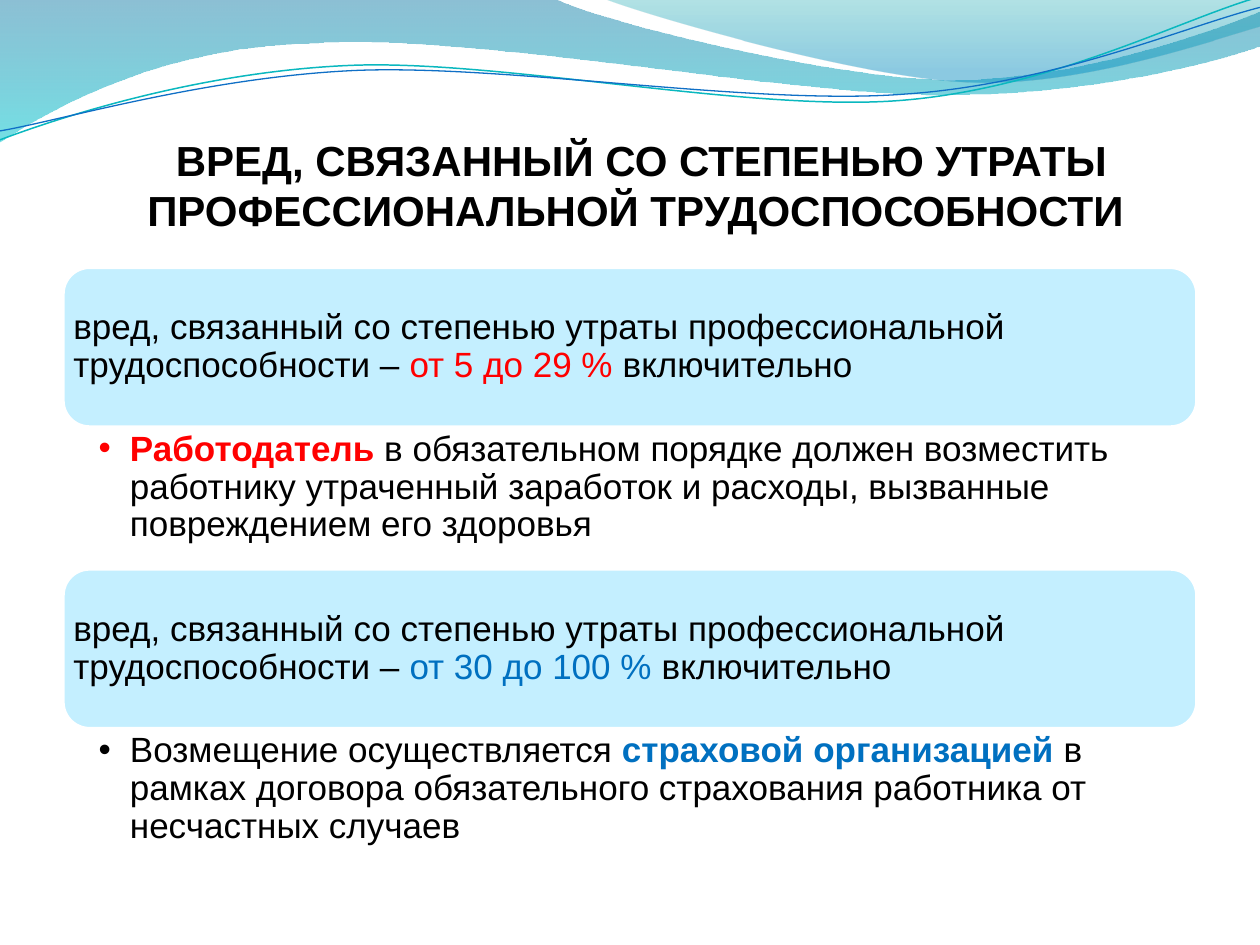
from pptx import Presentation
from pptx import util as u
from pptx.dml.color import RGBColor
from pptx.enum import shapes, text
from pptx.oxml.ns import qn
from lxml import etree

THEME = {
    "font": "Arial", "title_size": 24, "body_size": 20,
    "black": "000000", "red": "FF0000", "blue": "0070C0",
    "panel": "C4EFFF", "panel_line": "FFFFFF",
}

# Content: runs are (text, colour, bold)
TITLE = "ВРЕД, СВЯЗАННЫЙ СО СТЕПЕНЬЮ УТРАТЫ ПРОФЕССИОНАЛЬНОЙ ТРУДОСПОСОБНОСТИ "
HARM = "вред, связанный со степенью утраты профессиональной трудоспособности – "
SECTIONS = [
    {
        "heading": [(HARM, "black", False), ("от 5 до 29 % ", "red", False),
                    ("включительно", "black", False)],
        "detail": [("Работодатель", "red", True),
                   (" в обязательном порядке должен возместить работнику утраченный "
                    "заработок и расходы, вызванные повреждением его здоровья", "black", False)],
    },
    {
        "heading": [(HARM, "black", False), ("от 30 до 100 % ", "blue", False),
                    ("включительно", "black", False)],
        "detail": [("Возмещение осуществляется ", "black", False),
                   ("страховой организацией ", "blue", True),
                   ("в рамках договора обязательного страхования работника "
                    "от несчастных случаев", "black", False)],
    },
]

# Waves in cm: the first point, then segments of one point (line) or three (curve)
WAVES = [
    {"start": (0, 0), "stops": [(0, "0074A1", 45), (1, "00C6CF", 55)], "segments": [
        [(11.18, -0.03)],
        [(12.09, 0.43), (16.87, 1.6), (19.25, 1.6)],
        [(21.67, 1.6), (24.33, 0.66), (25.4, 0.23)],
        [(25.43, 0.91)],
        [(24.97, 1.12), (22.1, 1.93), (18.95, 1.91)],
        [(15.8, 1.91), (9.7, 0.71), (6.53, 0.86)],
        [(3.28, 0.91), (1.17, 2.11), (-0.03, 2.87)]]},
    {"start": (12.17, -0.03), "stops": [(0, "00A1A9", 30), (0.8, "008BBF", 45)], "segments": [
        [(12.93, 0.28), (17.32, 1.57), (19.53, 1.65)],
        [(21.74, 1.75), (24.41, 0.81), (25.4, 0.53)],
        [(25.4, 0)]]},
    {"start": (0, 2.82), "line": ("0AB8BF", 0.85), "segments": [
        [(1.22, 2.36), (4.01, 1.45), (7.04, 1.32)],
        [(10.03, 1.19), (15.06, 2.26), (18.11, 2.03)],
        [(21.16, 1.8), (23.83, 0.38), (25.35, -0.05)]]},
    {"start": (0, 2.64), "line": ("0F6FC6", 0.75), "segments": [
        [(1.19, 2.44), (4.17, 1.55), (7.19, 1.42)],
        [(10.24, 1.3), (15.16, 2.13), (18.21, 1.9)],
        [(21.23, 1.7), (23.9, 0.53), (25.4, 0.15)]]},
]

# Section layout in cm
LEFT, TOP, WIDTH = 1.27, 5.39, 22.86
PANEL_HEIGHT, DETAIL_HEIGHT = 3.22, 2.86


def color(name):
    return RGBColor.from_string(THEME.get(name, name))


def bend(shape, segments):
    """Turn each run of three line steps that stands for a curve into one curve."""
    steps = iter(list(shape._element.iter(qn("a:lnTo"))))
    for segment in segments:
        first, *others = [next(steps) for _ in segment]
        if others:
            curve = etree.Element(qn("a:cubicBezTo"))
            first.addprevious(curve)
            for step in (first, *others):
                curve.append(step[0])
                step.getparent().remove(step)


def add_wave(slide, wave):
    start, *points = [(u.Cm(x), u.Cm(y))
                      for segment in [[wave["start"]], *wave["segments"]] for x, y in segment]
    builder = slide.shapes.build_freeform(*start)
    builder.add_line_segments(points, close="stops" in wave)
    shape = builder.convert_to_shape()
    bend(shape, wave["segments"])
    shape.shadow.inherit = False
    if "line" in wave:
        shape.fill.background()
        line_color, line_width = wave["line"]
        shape.line.color.rgb = color(line_color)
        shape.line.width = u.Pt(line_width)
        return
    shape.line.fill.background()
    shape.fill.gradient()
    shape.fill.gradient_angle = 270
    for stop, (position, stop_color, _) in zip(shape.fill.gradient_stops, wave["stops"]):
        stop.position = position
        stop.color.rgb = color(stop_color)
    for node, (_, _, alpha) in zip(shape._element.spPr.iter(qn("a:srgbClr")), wave["stops"]):
        etree.SubElement(node, qn("a:alpha"), val=str(alpha * 1000))


def set_frame(frame, anchor, left, top, right, bottom):
    frame.word_wrap = True
    frame.auto_size = text.MSO_AUTO_SIZE.NONE
    frame.vertical_anchor = anchor
    frame.margin_left, frame.margin_top = u.Cm(left), u.Cm(top)
    frame.margin_right, frame.margin_bottom = u.Cm(right), u.Cm(bottom)


def add_runs(paragraph, runs, size):
    for content, run_color, bold in runs:
        run = paragraph.add_run()
        run.text = content
        run.font.name = THEME["font"]
        run.font.size = u.Pt(size)
        run.font.bold = bold
        run.font.color.rgb = color(run_color)


def add_body(slide, place, runs, anchor, margins):
    box = slide.shapes.add_textbox(*place)
    set_frame(box.text_frame, anchor, *margins)
    paragraph = box.text_frame.paragraphs[0]
    paragraph.line_spacing = 0.9
    add_runs(paragraph, runs, THEME["body_size"])
    return paragraph


def add_section(slide, section, top):
    # Rounded panel with its heading
    place = [u.Cm(length) for length in (LEFT, top, WIDTH, PANEL_HEIGHT)]
    panel = slide.shapes.add_shape(shapes.MSO_SHAPE.ROUNDED_RECTANGLE, *place)
    panel.shadow.inherit = False
    panel.fill.solid()
    panel.fill.fore_color.rgb = color("panel")
    panel.line.color.rgb = color("panel_line")
    panel.line.width = u.Pt(2)
    add_body(slide, place, section["heading"], text.MSO_ANCHOR.MIDDLE, [0.21] * 4)

    # Bulleted explanation below it
    place = [u.Cm(length) for length in (LEFT, top + PANEL_HEIGHT, WIDTH, DETAIL_HEIGHT)]
    detail = add_body(slide, place, section["detail"], text.MSO_ANCHOR.TOP,
                      (0.72, 0.08, 0.41, 0.08))
    properties = detail._p.get_or_add_pPr()
    properties.set("lvl", "1")
    properties.set("marL", str(u.Cm(0.63)))
    properties.set("indent", str(u.Cm(-0.63)))
    etree.SubElement(properties, qn("a:buFont"), typeface=THEME["font"])
    etree.SubElement(properties, qn("a:buChar"), char="•")


def main():
    presentation = Presentation()
    presentation.slide_width, presentation.slide_height = u.Cm(25.4), u.Cm(19.05)
    slide = presentation.slides.add_slide(presentation.slide_layouts[5])

    # Wave decoration
    for wave in WAVES:
        add_wave(slide, wave)

    # Title
    title = slide.shapes.title
    title.left, title.top, title.width, title.height = (
        u.Cm(1.5), u.Cm(2.33), u.Cm(22.86), u.Cm(2.41))
    set_frame(title.text_frame, text.MSO_ANCHOR.BOTTOM, 0, 0.13, 0, 0)
    paragraph = title.text_frame.paragraphs[0]
    paragraph.alignment = text.PP_ALIGN.CENTER
    add_runs(paragraph, [(TITLE, "black", True)], THEME["title_size"])

    # Sections
    for index, section in enumerate(SECTIONS):
        add_section(slide, section, TOP + index * (PANEL_HEIGHT + DETAIL_HEIGHT))

    presentation.save("out.pptx")


if __name__ == "__main__":
    main()
